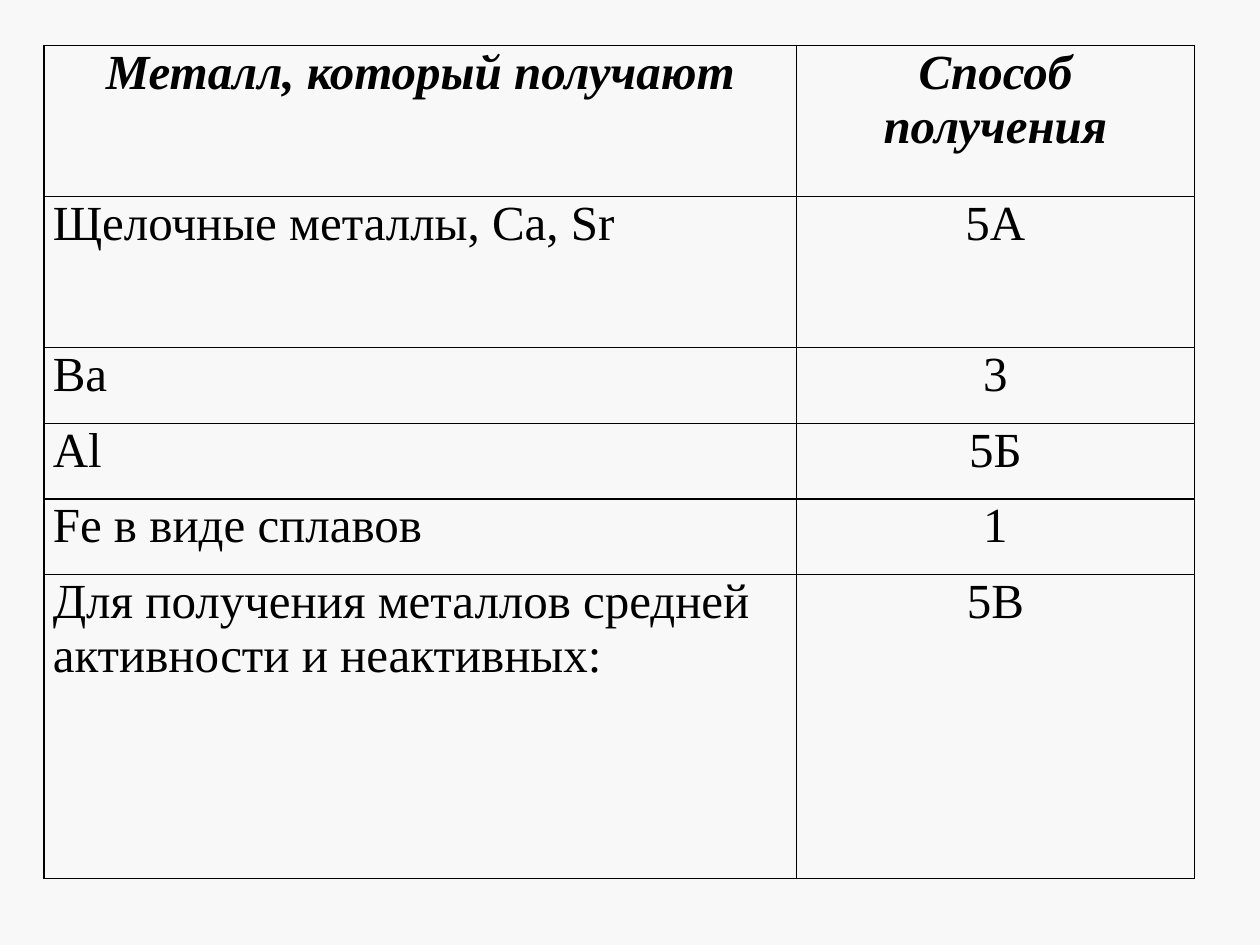
from lxml.etree import SubElement as Sub
from pptx import Presentation
from pptx.dml.color import RGBColor
from pptx.enum.text import PP_ALIGN as Align
from pptx.oxml.ns import qn
from pptx.util import Inches, Pt

WIDTH, HEIGHT = 10, 7.5
LEFT, TOP = 0.035 * WIDTH, 0.048 * HEIGHT
COLS = [5.97, 3.16]
UNIT = 0.6  # height of a one-line row
SPANS = [2, 2, 1, 1, 1, 4.02]  # row heights in units
INK, PAPER = "000000", "F8F8F8"
ROWS = [
    ("Металл, который получают", "Способ получения"),
    ("Щелочные металлы, Ca, Sr", "5А"),
    ("Ba", "3"),
    ("Al", "5Б"),
    ("Fe в виде сплавов", "1"),
    ("Для получения металлов средней активности и неактивных:", "5В"),
]


def paint(fill, color):
    fill.solid()
    fill.fore_color.rgb = RGBColor.from_string(color)


def frame(cell):
    """Draw a thin line on all four sides of a cell."""
    props = cell._tc.get_or_add_tcPr()
    for side in ("lnL", "lnR", "lnT", "lnB"):
        line = Sub(props, qn(f"a:{side}"), w=str(Pt(1)))
        fill = Sub(line, qn("a:solidFill"))
        Sub(fill, qn("a:srgbClr"), val=INK)


def write(cell, text, head, center):
    cell.margin_left = cell.margin_right = Inches(0.07)
    cell.margin_top = cell.margin_bottom = 0
    cell.text = text
    para = cell.text_frame.paragraphs[0]
    para.alignment = Align.CENTER if center else Align.LEFT
    font = para.font
    font.name, font.size = "Times New Roman", Pt(28)
    font.bold = font.italic = head
    paint(font.fill, INK)


def add_grid(slide):
    heights = [UNIT * span for span in SPANS]
    box = map(Inches, (LEFT, TOP, sum(COLS), sum(heights)))
    table = slide.shapes.add_table(len(ROWS), len(COLS), *box).table
    table.horz_banding = False
    for col, width in zip(table.columns, COLS):
        col.width = Inches(width)
    for r, (row, height) in enumerate(zip(table.rows, heights)):
        row.height = Inches(height)
        for c, cell in enumerate(row.cells):
            write(cell, ROWS[r][c], head=r == 0, center=r == 0 or c == 1)
            frame(cell)
            cell.fill.background()


def main():
    deck = Presentation()
    deck.slide_width, deck.slide_height = Inches(WIDTH), Inches(HEIGHT)
    slide = deck.slides.add_slide(deck.slide_layouts[6])
    # Background
    paint(slide.background.fill, PAPER)
    # Metals and the ways to obtain them
    add_grid(slide)
    deck.save("out.pptx")


if __name__ == "__main__":
    main()
